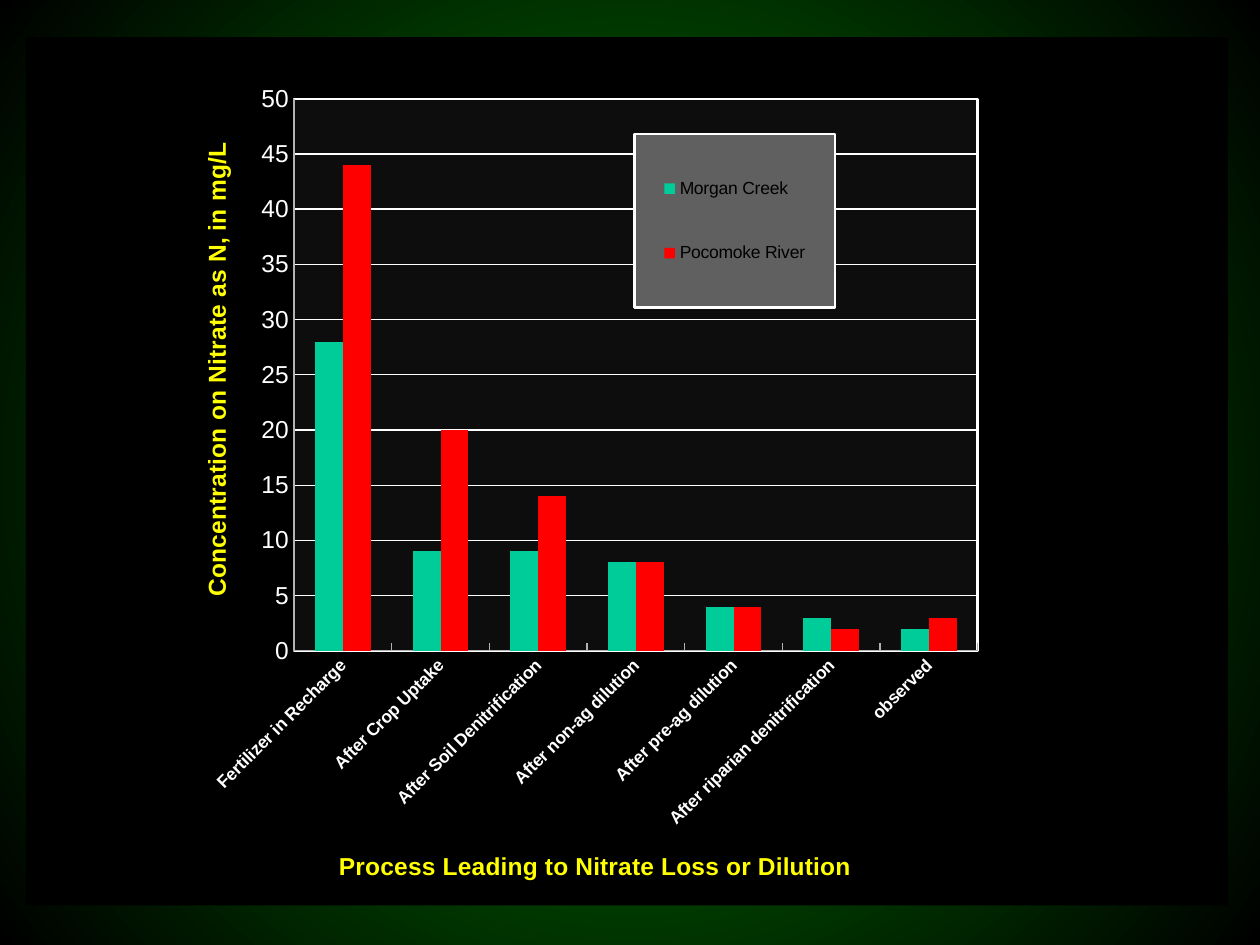
from lxml.etree import SubElement
from pptx import Presentation
from pptx.chart.data import CategoryChartData
from pptx.dml.color import RGBColor
from pptx.enum.chart import XL_CHART_TYPE, XL_LEGEND_POSITION, XL_TICK_MARK
from pptx.oxml.ns import qn
from pptx.util import Pt

CATS = ["Fertilizer in Recharge", "After Crop Uptake", "After Soil Denitrification",
        "After non-ag dilution", "After pre-ag dilution",
        "After riparian denitrification", "observed"]
ROWS = [("Morgan Creek", (28, 9, 9, 8, 4, 3, 2), "00CC99"),
        ("Pocomoke River", (44, 20, 14, 8, 4, 2, 3), "FF0000")]


def paint(color, value):
    color.rgb = RGBColor.from_string(value)


class Deck:
    """Holds the chart style and the current slide."""

    face, white, gold, black, gray = "Arial", "FFFFFF", "FFFF00", "000000", "B3B3B3"
    wide, high = 686.9, 496.1

    def __init__(self, wide, high):
        self.show = Presentation()
        self.show.slide_width, self.show.slide_height = Pt(wide), Pt(high)
        self.slide = self.show.slides.add_slide(self.show.slide_layouts[6])

    def glow(self, inner, outer):
        fill = self.slide.background.fill
        fill.gradient()
        for stop, value, place in zip(fill.gradient_stops, (inner, outer), (0, 1)):
            paint(stop.color, value)
            stop.position = place
        lin = self.slide.element.find(".//" + qn("a:lin"))
        grad = lin.getparent()
        grad.remove(lin)
        ring = SubElement(grad, qn("a:path"), {"path": "circle"})
        SubElement(ring, qn("a:fillToRect"), dict.fromkeys("ltrb", "50000"))

    def font(self, font, size, color, bold=False):
        font.name, font.size, font.bold = self.face, Pt(size), bold
        paint(font.color, color)

    def line(self, form, color, width):
        paint(form.line.color, color)
        form.line.width = Pt(width)

    def fill(self, node, color, edge=None):
        prop = node.find(qn("c:spPr"))
        if prop is None:
            prop = node.makeelement(qn("c:spPr"))
            spot = node.find(qn("c:txPr"))
            if spot is None:
                node.append(prop)
            else:
                spot.addprevious(prop)
        solid = SubElement(prop, qn("a:solidFill"))
        SubElement(solid, qn("a:srgbClr"), val=color)
        rim = SubElement(prop, qn("a:ln"), w=str(Pt(1.5)))
        if edge:
            solid = SubElement(rim, qn("a:solidFill"))
            SubElement(solid, qn("a:srgbClr"), val=edge)
        else:
            SubElement(rim, qn("a:noFill"))

    def place(self, node, inner=False, **box):
        for old in node.findall(qn("c:layout")):
            node.remove(old)
        lead = (qn("c:tx"), qn("c:legendPos"))
        lay = node.makeelement(qn("c:layout"))
        node.insert(sum(kid.tag in lead for kid in node), lay)
        man = SubElement(lay, qn("c:manualLayout"))
        if inner:
            SubElement(man, qn("c:layoutTarget"), val="inner")
        for key in "xy":
            SubElement(man, qn(f"c:{key}Mode"), val="edge")
        for key, value in box.items():
            full = self.wide if key in "xw" else self.high
            SubElement(man, qn(f"c:{key}"), val=str(value / full))

    def title(self, axis, text, x, y):
        head = axis.axis_title
        run = head.text_frame.paragraphs[0].add_run()
        run.text = text
        self.font(run.font, 14, self.gold, True)
        self.place(head._element, x=x, y=y)

    def axis(self, axis, size, bold, tick):
        self.font(axis.tick_labels.font, size, self.white, bold)
        axis.major_tick_mark, axis.minor_tick_mark = tick, XL_TICK_MARK.NONE
        self.line(axis.format, self.gray, 0.75)

    def legend(self, chart):
        chart.has_legend = True
        key = chart.legend
        key.position = XL_LEGEND_POSITION.RIGHT
        key.include_in_layout = False
        self.font(key.font, 10, self.black)
        self.fill(key._element, "606060", self.white)
        self.place(key._element, x=347.8, y=55.3, w=114.5, h=99.3)

    def chart(self, left, top):
        data = CategoryChartData(number_format="0")
        data.categories = CATS
        for name, vals, _ in ROWS:
            data.add_series(name, vals)
        chart = self.slide.shapes.add_chart(
            XL_CHART_TYPE.COLUMN_CLUSTERED, Pt(left), Pt(top),
            Pt(self.wide), Pt(self.high), data).chart
        self.font(chart.font, 10, self.black)
        chart.has_title = False
        plot = chart.plots[0]
        plot.gap_width, plot.overlap, plot.vary_by_categories = 150, 0, False
        for bar, (_, _, color) in zip(plot.series, ROWS):
            bar.format.fill.solid()
            paint(bar.format.fill.fore_color, color)
        cat, val = chart.category_axis, chart.value_axis
        self.axis(cat, 10, True, XL_TICK_MARK.INSIDE)
        cat._element.find(qn("c:txPr")).find(qn("a:bodyPr")).set("rot", "-2700000")
        self.axis(val, 14, False, XL_TICK_MARK.NONE)
        val.minimum_scale, val.maximum_scale, val.major_unit = 0, 50, 5
        val.tick_labels.number_format = "0"
        val.tick_labels.number_format_is_linked = False
        self.line(val.major_gridlines.format, self.white, 0.75)
        self.title(cat, "Process Leading to Nitrate Loss or Dilution", 176.3, 462.3)
        self.title(val, "Concentration on Nitrate as N, in mg/L", 97.3, 57.6)
        val.axis_title.text_frame._txBody.find(qn("a:bodyPr")).set("rot", "-5400000")
        self.legend(chart)
        space = chart._chartSpace
        area = space.find(".//" + qn("c:plotArea"))
        self.place(area, True, x=153.2, y=35.2, w=390.8, h=315.5)
        self.fill(area, "0D0D0D", self.white)
        self.fill(space, self.black)


def main():
    deck = Deck(720, 540)
    deck.glow("008000", "000000")
    deck.chart(14.8, 21.25)
    deck.show.save("out.pptx")


if __name__ == "__main__":
    main()
